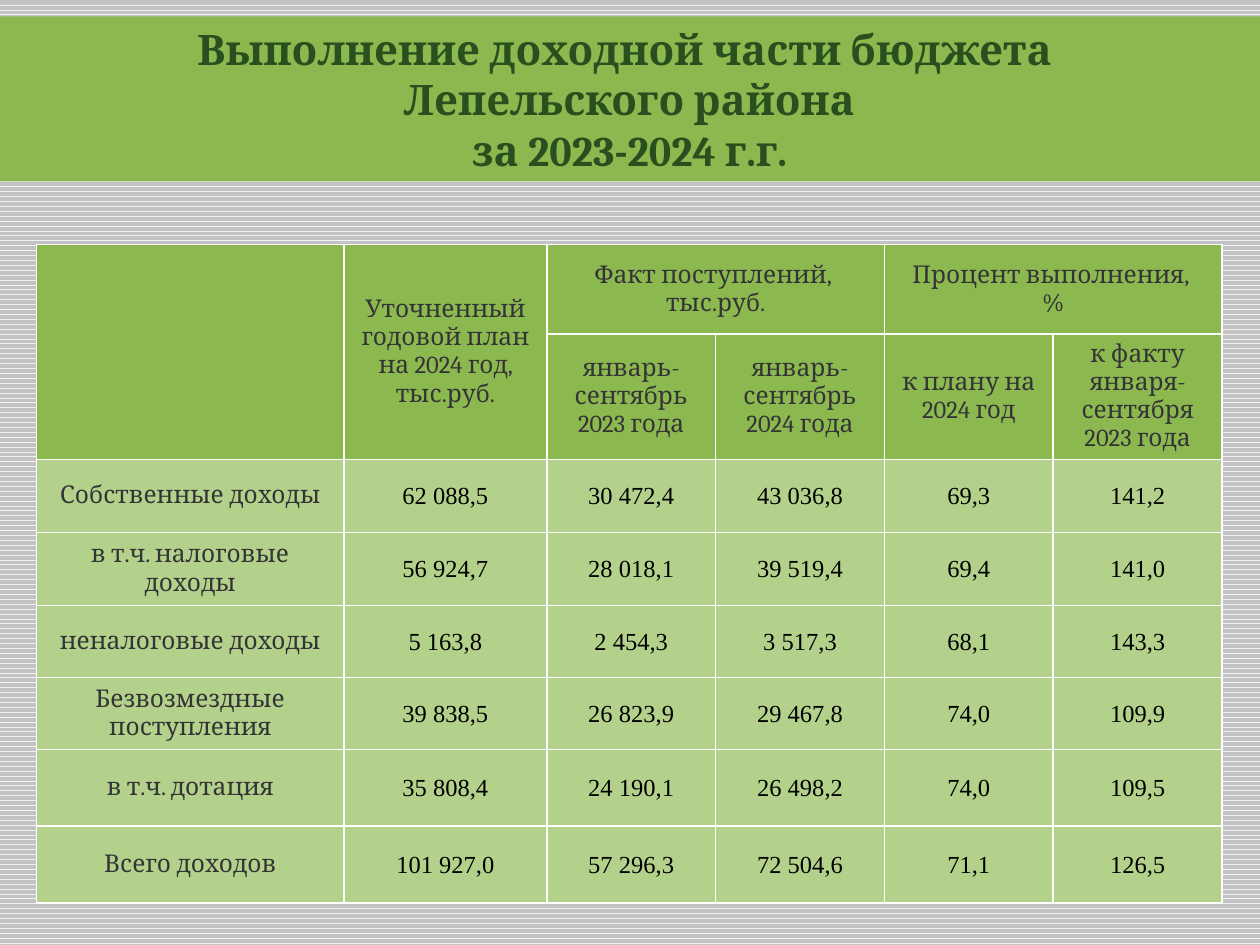
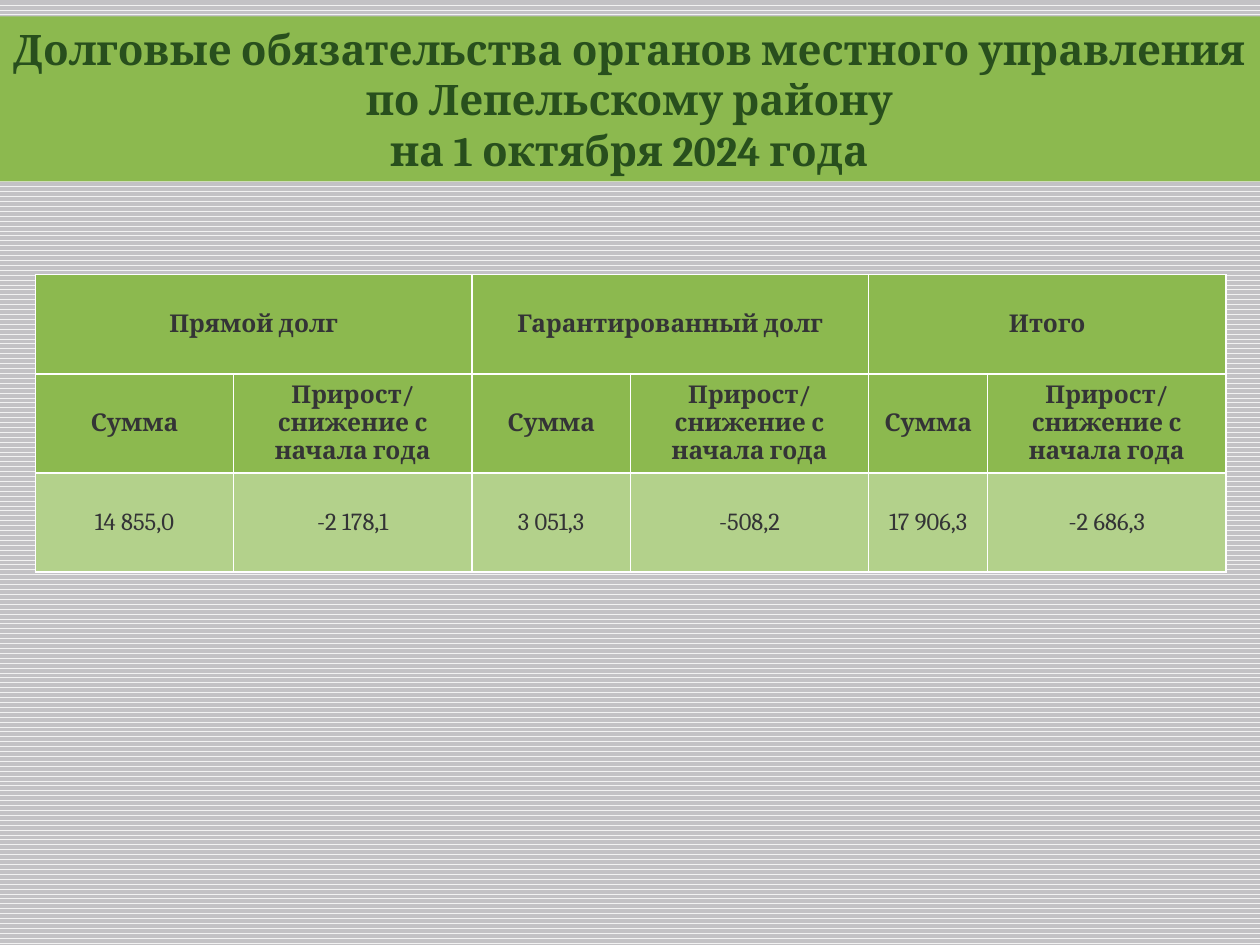
"""Build the two budget slides of the Lepel district report."""
from dataclasses import dataclass
from typing import NamedTuple

from lxml import etree
from pptx import Presentation
from pptx import util as u
from pptx.dml.color import RGBColor
from pptx.enum import dml, text
from pptx.oxml import ns


@dataclass(frozen=True)
class Theme:
    width: float = 10
    height: float = 7.5
    band: str = "8CB94F"
    body: str = "B3D18B"
    border: str = "FFFFFF"
    heading: str = "284F1D"
    ink: str = "343436"
    black: str = "000000"
    stripe: str = "F2F2F2"
    ground: str = "C3C2C5"
    serif: str = "Cambria"
    figures: str = "Times New Roman"
    title_size: int = 24
    cell_size: int = 14
    border_width: int = 1


class Area(NamedTuple):
    left: float
    top: float
    width: float
    height: float


class Header(NamedTuple):
    row: int
    column: int
    label: str
    rows: int = 1
    columns: int = 1


@dataclass(frozen=True)
class Grid:
    area: Area
    columns: list[float]
    rows: list[float]
    headers: list[Header]
    records: list[list[str]]
    header_rows: int = 2
    bold_headers: bool = False
    labelled: bool = False


THEME = Theme()
TITLE_AREA = Area(-0.001, 0.0173, 1.001, 0.1747)

INCOME = Grid(
    area=Area(0.029, 0.2587, 0.941, 0.69),
    columns=[2.44, 1.61] + [1.34] * 4,
    rows=[0.71, 0.94, 0.58, 0.58, 0.57, 0.57, 0.61, 0.61],
    headers=[
        Header(0, 0, "", rows=2),
        Header(0, 1, "Уточненный годовой план на 2024 год, тыс.руб.", rows=2),
        Header(0, 2, "Факт поступлений, \nтыс.руб.", columns=2),
        Header(0, 4, "Процент выполнения, \n%", columns=2),
        Header(1, 2, "январь-сентябрь 2023 года"),
        Header(1, 3, "январь-сентябрь 2024 года"),
        Header(1, 4, "к плану на 2024 год"),
        Header(1, 5, "к факту января-сентября 2023 года"),
    ],
    records=[
        ["Собственные доходы", "62 088,5", "30 472,4", "43 036,8", "69,3", "141,2"],
        ["в т.ч. налоговые доходы", "56 924,7", "28 018,1", "39 519,4", "69,4", "141,0"],
        ["неналоговые доходы", "5 163,8", "2 454,3", "3 517,3", "68,1", "143,3"],
        ["Безвозмездные поступления", "39 838,5", "26 823,9", "29 467,8", "74,0", "109,9"],
        ["в т.ч. дотация", "35 808,4", "24 190,1", "26 498,2", "74,0", "109,5"],
        ["Всего доходов", "101 927,0", "57 296,3", "72 504,6", "71,1", "126,5"],
    ],
    labelled=True,
)

DEBT_GROUPS = ["Прямой долг", "Гарантированный долг", "Итого"]
DEBT_MEASURES = ["Сумма", "Прирост/снижение с начала года"]
DEBT = Grid(
    area=Area(0.028, 0.2907, 0.945, 0.3147),
    columns=[5, 6, 4, 6, 3, 6],
    rows=[1, 1, 1],
    headers=[Header(0, 2 * i, group, columns=2) for i, group in enumerate(DEBT_GROUPS)]
    + [Header(1, i, measure) for i, measure in enumerate(DEBT_MEASURES * len(DEBT_GROUPS))],
    records=[["14 855,0", "-2 178,1", "3 051,3", "-508,2", "17 906,3", "-2 686,3"]],
    bold_headers=True,
)

SLIDES = [
    ("Выполнение доходной части бюджета \nЛепельского района\nза 2023-2024 г.г.", INCOME),
    ("Долговые обязательства органов местного управления \n"
     "по Лепельскому району\nна 1 октября 2024 года", DEBT),
]


def place(area: Area) -> tuple[int, int, int, int]:
    """Turn shares of the slide into lengths."""
    return (u.Inches(area.left * THEME.width), u.Inches(area.top * THEME.height),
            u.Inches(area.width * THEME.width), u.Inches(area.height * THEME.height))


def paint(fill, color: str) -> None:
    """Fill an object with one colour."""
    fill.solid()
    fill.fore_color.rgb = RGBColor.from_string(color)


def write(frame, content: str, *, size: int = THEME.cell_size, font: str = THEME.serif,
          color: str = THEME.ink, bold: bool = False) -> None:
    """Write centred paragraphs, one for each line of the content."""
    for index, line in enumerate(content.split("\n")):
        para = frame.add_paragraph() if index else frame.paragraphs[0]
        para.alignment = text.PP_ALIGN.CENTER
        span = para.add_run()
        span.text = line
        span.font.size = u.Pt(size)
        span.font.name = font
        span.font.bold = bold
        span.font.color.rgb = RGBColor.from_string(color)


def set_background(page) -> None:
    """Give the page its striped ground."""
    fill = page.background.fill
    fill.patterned()
    fill.pattern = dml.MSO_PATTERN.WAVE
    fill.fore_color.rgb = RGBColor.from_string(THEME.stripe)
    fill.back_color.rgb = RGBColor.from_string(THEME.ground)


def add_title(page, content: str) -> None:
    """Turn the title placeholder into the green band."""
    box = page.shapes.title
    box.left, box.top, box.width, box.height = place(TITLE_AREA)
    paint(box.fill, THEME.band)
    frame = box.text_frame
    frame.auto_size = text.MSO_AUTO_SIZE.NONE
    frame.word_wrap = True
    frame.vertical_anchor = text.MSO_ANCHOR.MIDDLE
    write(frame, content, size=THEME.title_size, color=THEME.heading, bold=True)


def style_cell(cell, color: str) -> None:
    """Give a cell its borders, fill and anchor."""
    properties = cell._tc.get_or_add_tcPr()
    for side in ("a:lnL", "a:lnR", "a:lnT", "a:lnB"):
        line = etree.SubElement(properties, ns.qn(side), w=str(u.Pt(THEME.border_width)))
        solid = etree.SubElement(line, ns.qn("a:solidFill"))
        etree.SubElement(solid, ns.qn("a:srgbClr"), val=THEME.border)
    paint(cell.fill, color)
    cell.vertical_anchor = text.MSO_ANCHOR.MIDDLE


def add_grid(page, grid: Grid) -> None:
    """Draw a table with its header cells and records."""
    left, top, width, height = place(grid.area)
    table = page.shapes.add_table(len(grid.rows), len(grid.columns),
                                  left, top, width, height).table
    table.first_row = table.horz_banding = False
    for column, weight in zip(table.columns, grid.columns):
        column.width = int(width * weight / sum(grid.columns))
    for row, weight in zip(table.rows, grid.rows):
        row.height = int(height * weight / sum(grid.rows))
    for index, row in enumerate(table.rows):
        for cell in row.cells:
            style_cell(cell, THEME.band if index < grid.header_rows else THEME.body)
    for header in grid.headers:
        cell = table.cell(header.row, header.column)
        if header.rows > 1 or header.columns > 1:
            cell.merge(table.cell(header.row + header.rows - 1,
                                  header.column + header.columns - 1))
        if header.label:
            write(cell.text_frame, header.label, bold=grid.bold_headers)
    for row, record in enumerate(grid.records, grid.header_rows):
        for column, value in enumerate(record):
            cell = table.cell(row, column)
            if grid.labelled and column:
                cell.margin_left = cell.margin_right = cell.margin_top = u.Inches(0.01)
                cell.margin_bottom = 0
                write(cell.text_frame, value, font=THEME.figures, color=THEME.black)
            else:
                write(cell.text_frame, value)


def main() -> None:
    """Build and save the deck."""
    deck = Presentation()
    deck.slide_width = u.Inches(THEME.width)
    deck.slide_height = u.Inches(THEME.height)
    for title, grid in SLIDES:
        page = deck.slides.add_slide(deck.slide_layouts.get_by_name("Title Only"))
        set_background(page)
        add_title(page, title)
        add_grid(page, grid)
    deck.save("out.pptx")


if __name__ == "__main__":
    main()
